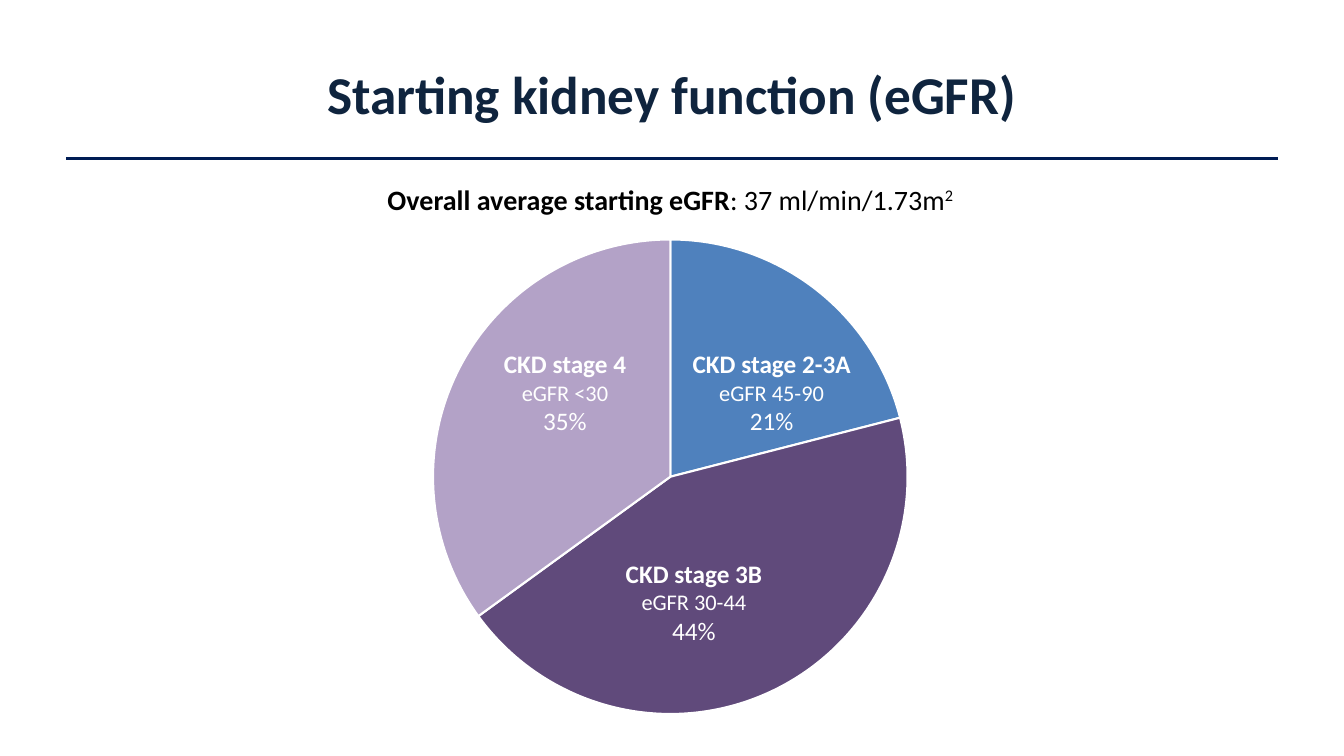
import pptx
import pptx.chart.data
import pptx.dml.color
import pptx.enum.chart
import pptx.enum.shapes
import pptx.enum.text
import pptx.util
from lxml import etree

Pt = pptx.util.Pt
RGBColor = pptx.dml.color.RGBColor

FONT = "Calibri"
NAVY = RGBColor(0x0F, 0x24, 0x3E)
RULE_BLUE = RGBColor(0x00, 0x1C, 0x54)
BLACK = RGBColor(0x00, 0x00, 0x00)
WHITE = RGBColor(0xFF, 0xFF, 0xFF)
BLUE = RGBColor(0x4F, 0x81, 0xBD)
PURPLE = RGBColor(0x60, 0x4A, 0x7B)
LILAC = RGBColor(0xB3, 0xA2, 0xC7)

SLIDE_WIDTH, SLIDE_HEIGHT = 960, 540
LABEL_SIZE = (153.4, 72.7)
PIE_DIAMETER = 339

# stage, eGFR range, percentage, slice colour, label offset within the chart box
STAGES = [
    ("CKD stage 2-3A", "eGFR 45-90", 21, BLUE, (175.7, 104.4)),
    ("CKD stage 3B", "eGFR 30-44", 44, PURPLE, (120.2, 254.2)),
    ("CKD stage 4", "eGFR <30", 35, LILAC, (28.1, 104.4)),
]


def add_run(paragraph, text, size=18, color=BLACK, bold=False, superscript=False):
    run = paragraph.add_run()
    run.text = text
    run.font.name = FONT
    run.font.size = Pt(size)
    run.font.bold = bold
    run.font.color.rgb = color
    if superscript:
        run.font._element.set("baseline", "30000")


def add_text(slide, box, paragraphs, anchor=pptx.enum.text.MSO_ANCHOR.TOP):
    """Add centred paragraphs, each a list of (text, format) runs."""
    frame = slide.shapes.add_textbox(*map(Pt, box)).text_frame
    frame.word_wrap = True
    frame.vertical_anchor = anchor
    for index, runs in enumerate(paragraphs):
        paragraph = frame.add_paragraph() if index else frame.paragraphs[0]
        paragraph.alignment = pptx.enum.text.PP_ALIGN.CENTER
        for text, text_format in runs:
            add_run(paragraph, text, **text_format)


def add_heading(slide, box):
    left, top, width, height = box
    margin, rule_y = 47.3, top + height + 1.4
    rule = slide.shapes.add_connector(
        pptx.enum.shapes.MSO_CONNECTOR.STRAIGHT,
        Pt(left + margin), Pt(rule_y), Pt(left + width - margin), Pt(rule_y))
    rule.line.color.rgb = RULE_BLUE
    rule.line.width = Pt(2.25)
    etree.SubElement(rule._element.spPr, pptx.oxml.ns.qn("a:effectLst"))
    title = ("Starting kidney function (eGFR)", dict(size=38, color=NAVY, bold=True))
    add_text(slide, box, [[title]], anchor=pptx.enum.text.MSO_ANCHOR.MIDDLE)


def set_plot_area(chart, width, height):
    """Centre the pie at its full diameter in a chart of the given size."""
    share_x, share_y = PIE_DIAMETER / width, PIE_DIAMETER / height
    plot_area = chart._chartSpace.chart.plotArea
    for old_layout in plot_area.findall(pptx.oxml.ns.qn("c:layout")):
        plot_area.remove(old_layout)
    layout = etree.Element(pptx.oxml.ns.qn("c:layout"))
    manual = etree.SubElement(layout, pptx.oxml.ns.qn("c:manualLayout"))
    for tag, value in [
        ("layoutTarget", "inner"), ("xMode", "edge"), ("yMode", "edge"),
        ("x", (1 - share_x) / 2), ("y", (1 - share_y) / 2),
        ("w", share_x), ("h", share_y),
    ]:
        text = value if isinstance(value, str) else f"{value:.4f}"
        etree.SubElement(manual, pptx.oxml.ns.qn(f"c:{tag}")).set("val", text)
    plot_area.insert(0, layout)


def add_stage_pie(slide, box):
    left, top, width, height = box
    data = pptx.chart.data.CategoryChartData()
    data.categories = [str(number) for number in range(1, len(STAGES) + 1)]
    data.add_series("Series 1", [stage[2] for stage in STAGES])
    chart = slide.shapes.add_chart(
        pptx.enum.chart.XL_CHART_TYPE.PIE, *map(Pt, box), data).chart
    chart.has_legend = False
    chart.has_title = False
    chart.font.name = FONT
    chart.font.size = Pt(10)
    chart.font.color.rgb = BLACK
    set_plot_area(chart, width, height)
    plot = chart.plots[0]
    plot.vary_by_categories = True

    for index, (name, egfr, percent, color, offset) in enumerate(STAGES):
        point_format = plot.series[0].points[index].format
        point_format.fill.solid()
        point_format.fill.fore_color.rgb = color
        point_format.line.color.rgb = WHITE
        point_format.line.width = Pt(1.5)
        label_box = (left + offset[0], top + offset[1], *LABEL_SIZE)
        add_text(slide, label_box, [
            [(name, dict(color=WHITE, bold=True))],
            [(egfr, dict(size=16, color=WHITE))],
            [(f"{percent}%", dict(color=WHITE))],
        ])


def add_average(slide, box):
    add_text(slide, box, [[
        ("Overall average starting eGFR", dict(size=20, bold=True)),
        (": 37 ml/min/1.73m", dict(size=20)),
        ("2", dict(size=20, superscript=True)),
    ]])


def main():
    presentation = pptx.Presentation()
    presentation.slide_width = Pt(SLIDE_WIDTH)
    presentation.slide_height = Pt(SLIDE_HEIGHT)
    slide = presentation.slides.add_slide(presentation.slide_layouts[6])
    add_heading(slide, (0, 21.6, SLIDE_WIDTH, 90))
    add_stage_pie(slide, (298.8, 141.1, 360, 398.9))
    add_average(slide, (141.1, 126.7, 675.4, 31.7))
    presentation.save("out.pptx")


if __name__ == "__main__":
    main()
